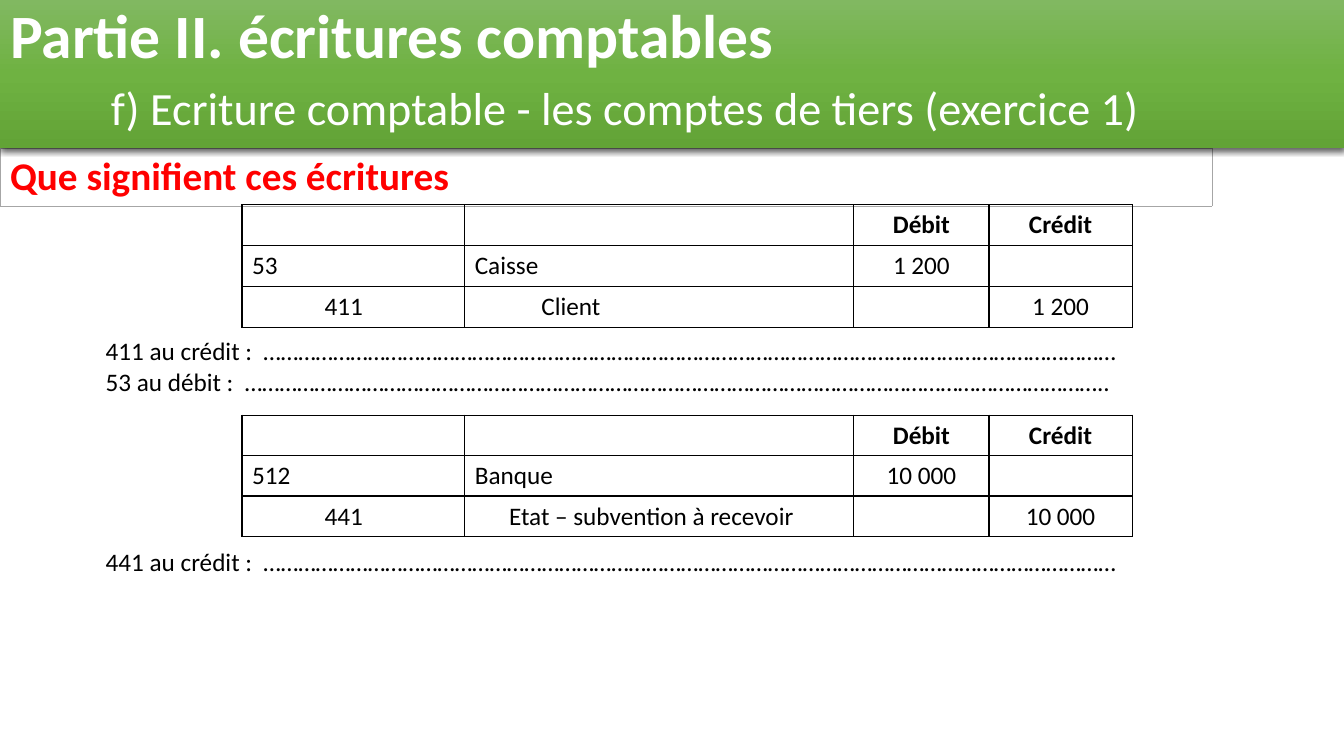
from dataclasses import dataclass

from lxml import etree
from pptx import Presentation
from pptx.dml.color import RGBColor
from pptx.enum.text import MSO_ANCHOR, MSO_AUTO_SIZE, PP_ALIGN
from pptx.oxml import parse_xml
from pptx.oxml.ns import qn
from pptx.util import Inches, Pt

LEFT, CENTER = PP_ALIGN.LEFT, PP_ALIGN.CENTER
MIDDLE = MSO_ANCHOR.MIDDLE
NO_AUTOFIT = MSO_AUTO_SIZE.NONE
DRAWING_NS = 'xmlns:a="http://schemas.openxmlformats.org/drawingml/2006/main"'


@dataclass(frozen=True)
class Theme:
    font: str = "Calibri"
    ink: str = "000000"
    white: str = "FFFFFF"
    question: str = "FF0000"
    frame: str = "A6A6A6"
    banner: tuple = ((0, "81B861"), (50, "6FB242"), (100, "62A336"))
    title_size: int = 44
    subtitle_size: int = 33
    question_size: int = 28
    body_size: int = 18
    rule: float = 1
    thin_rule: float = 0.25


def write(paragraph, text, *, theme, size, color, bold=False, align=LEFT):
    """Add one formatted run to a paragraph."""
    paragraph.alignment = align
    run = paragraph.add_run()
    run.text = text
    run.font.name = theme.font
    run.font.size = Pt(size)
    run.font.bold = bold
    run.font.color.rgb = RGBColor.from_string(color)


class SlideBuilder:
    def __init__(self, slide, theme):
        self.slide = slide
        self.theme = theme

    def banner(self, title, subtitle, width, height):
        theme = self.theme
        banner = self.slide.shapes.title
        banner.left, banner.top = Inches(0), Inches(0)
        banner.width, banner.height = Inches(width), Inches(height)

        # Vertical gradient and soft shadow
        stops = "".join(
            f'<a:gs pos="{position * 1000}"><a:srgbClr val="{color}"/></a:gs>'
            for position, color in theme.banner)
        properties = banner._element.spPr
        properties.append(parse_xml(
            f'<a:gradFill {DRAWING_NS} rotWithShape="1"><a:gsLst>{stops}</a:gsLst>'
            '<a:lin ang="5400000" scaled="0"/></a:gradFill>'))
        properties.append(parse_xml(
            f'<a:effectLst {DRAWING_NS}><a:outerShdw blurRad="{Pt(4.5)}" dist="{Pt(1.5)}" '
            f'dir="5400000" algn="ctr" rotWithShape="0"><a:srgbClr val="{theme.ink}">'
            '<a:alpha val="63000"/></a:srgbClr></a:outerShdw></a:effectLst>'))

        frame = banner.text_frame
        frame.word_wrap = True
        frame.auto_size = NO_AUTOFIT
        frame.vertical_anchor = MIDDLE
        frame.margin_top, frame.margin_bottom = Inches(0.03), Inches(0.07)
        heading = frame.paragraphs[0]
        heading.line_spacing = 0.9
        heading._p.get_or_add_pPr().set("defTabSz", str(Inches(1)))
        large = dict(theme=theme, size=theme.title_size, color=theme.white, bold=True)
        write(heading, title, **large)
        heading.add_line_break()
        write(heading, "\t", **large)
        write(heading, subtitle, theme=theme, size=theme.subtitle_size, color=theme.white)

        # The banner casts its shadow over the content
        self.slide.shapes._spTree.append(banner._element)

    def table(self, left, top, column_widths, row_count, row_height):
        table = self.slide.shapes.add_table(
            row_count, len(column_widths), Inches(left), Inches(top),
            Inches(sum(column_widths)), Inches(row_count * row_height)).table
        table.first_row = table.horz_banding = False
        for column, width in zip(table.columns, column_widths):
            column.width = Inches(width)
        for row in table.rows:
            row.height = Inches(row_height)
        return table

    def border(self, cell, color, width, open_sides=""):
        properties = cell._tc.get_or_add_tcPr()
        for side in "LRTB":
            line = etree.SubElement(properties, qn(f"a:ln{side}"), w=str(Pt(width)))
            if side in open_sides:
                etree.SubElement(line, qn("a:noFill"))
            else:
                fill = etree.SubElement(line, qn("a:solidFill"))
                etree.SubElement(fill, qn("a:srgbClr"), val=color)
        cell.fill.background()

    def question(self, text, top, width, height):
        theme = self.theme
        cell = self.table(0, top, [width], 1, height).cell(0, 0)
        self.border(cell, theme.frame, theme.thin_rule)
        write(cell.text_frame.paragraphs[0], text, theme=theme,
              size=theme.question_size, color=theme.question, bold=True)

    def entry(self, top, indent, debit, credit, amount):
        """Draw a journal entry; debit and credit are (account, label) pairs."""
        theme = self.theme
        label_width = 3.86
        widths = [0.72, 1.49, indent, label_width - indent, 1.34, 1.42]
        table = self.table(2.4, top, widths, 3, 0.4)

        # The credit row keeps an open indent before account and label
        for row in range(3):
            for column in range(len(widths)):
                open_sides = ""
                if row == 2 and column < 4:
                    open_sides = "L" if column % 2 else "R"
                self.border(table.cell(row, column), theme.ink, theme.rule, open_sides)
        for row in range(2):
            for column in (0, 2):
                table.cell(row, column).merge(table.cell(row, column + 1))

        contents = {
            (0, 4): "Débit", (0, 5): "Crédit",
            (1, 0): debit[0], (1, 2): debit[1], (1, 4): amount,
            (2, 1): credit[0], (2, 3): credit[1], (2, 5): amount,
        }
        for (row, column), text in contents.items():
            write(table.cell(row, column).text_frame.paragraphs[0], text,
                  theme=theme, size=theme.body_size, color=theme.ink,
                  bold=row == 0, align=CENTER if column >= 4 else LEFT)

    def answers(self, lines, top, height):
        theme = self.theme
        frame = self.slide.shapes.add_textbox(
            Inches(0.95), Inches(top), Inches(11.71), Inches(height)).text_frame
        frame.word_wrap = True
        for index, line in enumerate(lines):
            paragraph = frame.add_paragraph() if index else frame.paragraphs[0]
            write(paragraph, line, theme=theme, size=theme.body_size, color=theme.ink)


def main():
    presentation = Presentation()
    presentation.slide_width = Inches(13.33)
    presentation.slide_height = Inches(7.5)
    title_only = presentation.slide_layouts[5]
    builder = SlideBuilder(presentation.slides.add_slide(title_only), Theme())

    # Question
    builder.question("Que signifient ces écritures", 1.47, 12.02, 0.57)

    # Customer payment
    dots = "…" * 49
    builder.entry(2.03, 0.66, ("53", "Caisse"), ("411", "Client"), "1 200")
    builder.answers([f"411 au crédit :  {dots}", f"53 au débit :  {dots}.."], 3.28, 0.71)

    # Grant received
    builder.entry(4.12, 0.34, ("512", "Banque"),
                  ("441", "Etat – subvention à recevoir"), "10 000")
    builder.answers([f"441 au crédit :  {dots}"], 5.37, 0.4)

    # Title banner
    builder.banner("Partie II. écritures comptables",
                   "f) Ecriture comptable - les comptes de tiers (exercice 1)", 13.33, 1.47)

    presentation.save("out.pptx")


if __name__ == "__main__":
    main()
